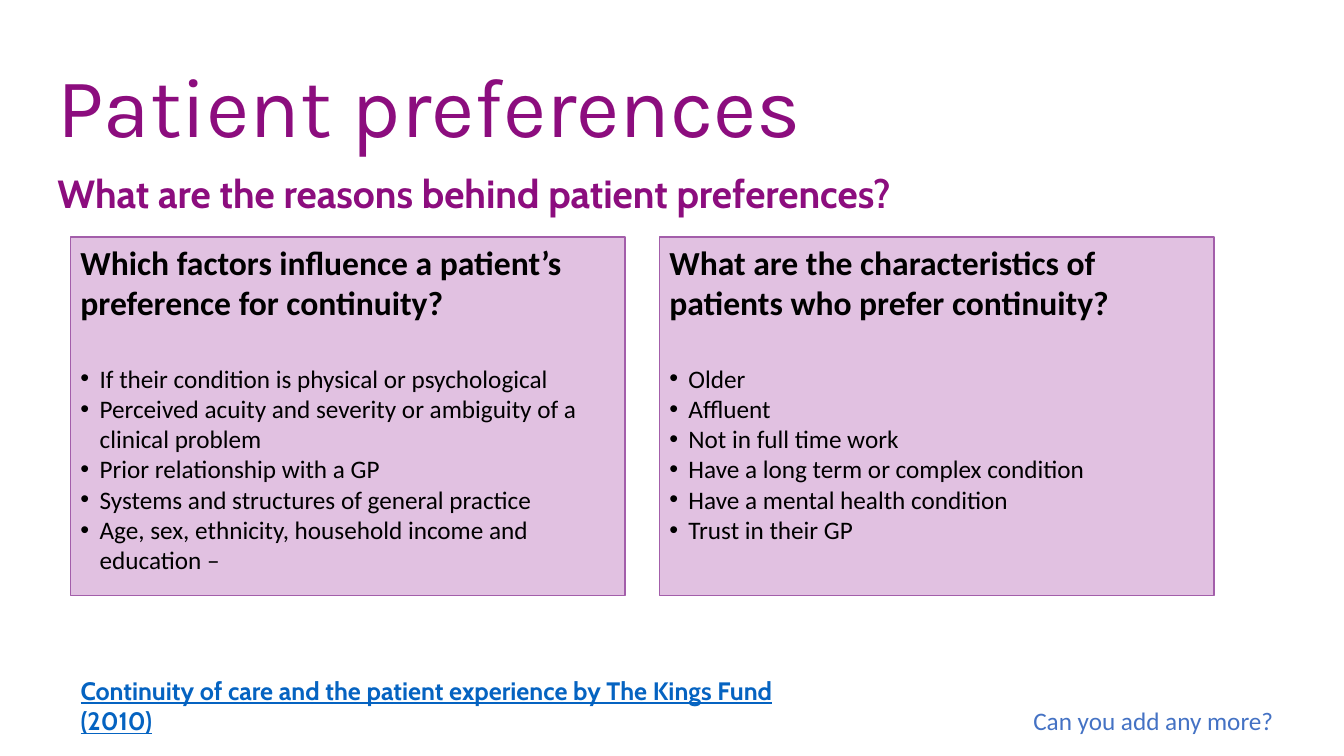
from pptx import Presentation
from pptx.dml.color import RGBColor
from pptx.enum.shapes import MSO_SHAPE
from pptx.enum.text import MSO_ANCHOR, PP_ALIGN
from pptx.oxml.ns import qn
from pptx.util import Inches, Pt
from lxml import etree

RECTANGLE = MSO_SHAPE.RECTANGLE
TOP = MSO_ANCHOR.TOP
MIDDLE = MSO_ANCHOR.MIDDLE
LEFT = PP_ALIGN.LEFT

PURPLE = "8C0D7E"
PANEL_FILL = "E1C1E1"
PANEL_LINE = "A35EAA"
BLACK = "000000"
PROMPT_BLUE = "4472C4"
LINK_BLUE = "0563C1"

PANEL_LEFT = 0.7
PANEL_TOP = 2.35
PANEL_WIDTH = 5.5
PANEL_HEIGHT = 3.56
PANEL_GAP = 0.34
BULLET_INDENT = 0.19

PANELS = [
    ("Which factors influence a patient’s preference for continuity?", [
        "If their condition is physical or psychological",
        "Perceived acuity and severity or ambiguity of a clinical problem",
        "Prior relationship with a GP",
        "Systems and structures of general practice",
        "Age, sex, ethnicity, household income and education –",
    ]),
    ("What are the characteristics of patients who prefer continuity?", [
        "Older",
        "Affluent",
        "Not in full time work",
        "Have a long term or complex condition",
        "Have a mental health condition",
        "Trust in their GP",
    ]),
]


def color(value):
    return RGBColor.from_string(value)


def write(paragraph, text, size=18, font="Calibri", fill=BLACK, bold=False,
          underline=False, line_spacing=1.0, space_before=0):
    paragraph.alignment = LEFT
    paragraph.line_spacing = line_spacing
    paragraph.space_before = Pt(space_before)
    run = paragraph.add_run()
    run.text = text
    run.font.size = Pt(size)
    run.font.name = font
    run.font.bold = bold
    run.font.underline = underline
    run.font.color.rgb = color(fill)


def add_bullet(paragraph):
    properties = paragraph._p.get_or_add_pPr()
    properties.set("marL", str(Inches(BULLET_INDENT)))
    properties.set("indent", str(-Inches(BULLET_INDENT)))
    etree.SubElement(properties, qn("a:buFont")).set("typeface", "Arial")
    etree.SubElement(properties, qn("a:buChar")).set("char", "•")


def add_text(slide, text, left, top, width, height, anchor=TOP, **text_format):
    box = slide.shapes.add_textbox(
        Inches(left), Inches(top), Inches(width), Inches(height))
    frame = box.text_frame
    frame.word_wrap = True
    frame.vertical_anchor = anchor
    write(frame.paragraphs[0], text, **text_format)


def add_panel(slide, left, heading, items):
    panel = slide.shapes.add_shape(
        RECTANGLE, Inches(left), Inches(PANEL_TOP),
        Inches(PANEL_WIDTH), Inches(PANEL_HEIGHT))
    panel.shadow.inherit = False
    panel.fill.solid()
    panel.fill.fore_color.rgb = color(PANEL_FILL)
    panel.line.color.rgb = color(PANEL_LINE)
    panel.line.width = Pt(1)
    frame = panel.text_frame
    frame.word_wrap = True
    frame.vertical_anchor = TOP
    write(frame.paragraphs[0], heading, size=24, bold=True)
    for index, item in enumerate(items):
        paragraph = frame.add_paragraph()
        add_bullet(paragraph)
        write(paragraph, item, space_before=29 if index == 0 else 0)


def main():
    presentation = Presentation()
    presentation.slide_width = Inches(13.33)
    presentation.slide_height = Inches(7.5)
    slide = presentation.slides.add_slide(presentation.slide_layouts[6])

    add_text(slide, "Patient preferences", 0.47, 0.46, 12.32, 1.26,
             anchor=MIDDLE, size=60, font="Karla", fill=PURPLE, line_spacing=0.9)
    add_text(slide, "What are the reasons behind patient preferences?",
             0.47, 1.72, 12.32, 0.51,
             size=28, font="Cabin", fill=PURPLE, bold=True, line_spacing=0.8)
    for index, (heading, items) in enumerate(PANELS):
        left = PANEL_LEFT + index * (PANEL_WIDTH + PANEL_GAP)
        add_panel(slide, left, heading, items)
    add_text(slide, "Can you add any more?", 10.15, 6.95, 3.35 - 0.17, 0.4,
             fill=PROMPT_BLUE)
    add_text(slide,
             "Continuity of care and the patient experience by The Kings Fund (2010)",
             PANEL_LEFT, 6.65, 7.75, 0.4,
             font="Cabin", fill=LINK_BLUE, bold=True, underline=True)

    presentation.save("out.pptx")


if __name__ == "__main__":
    main()
